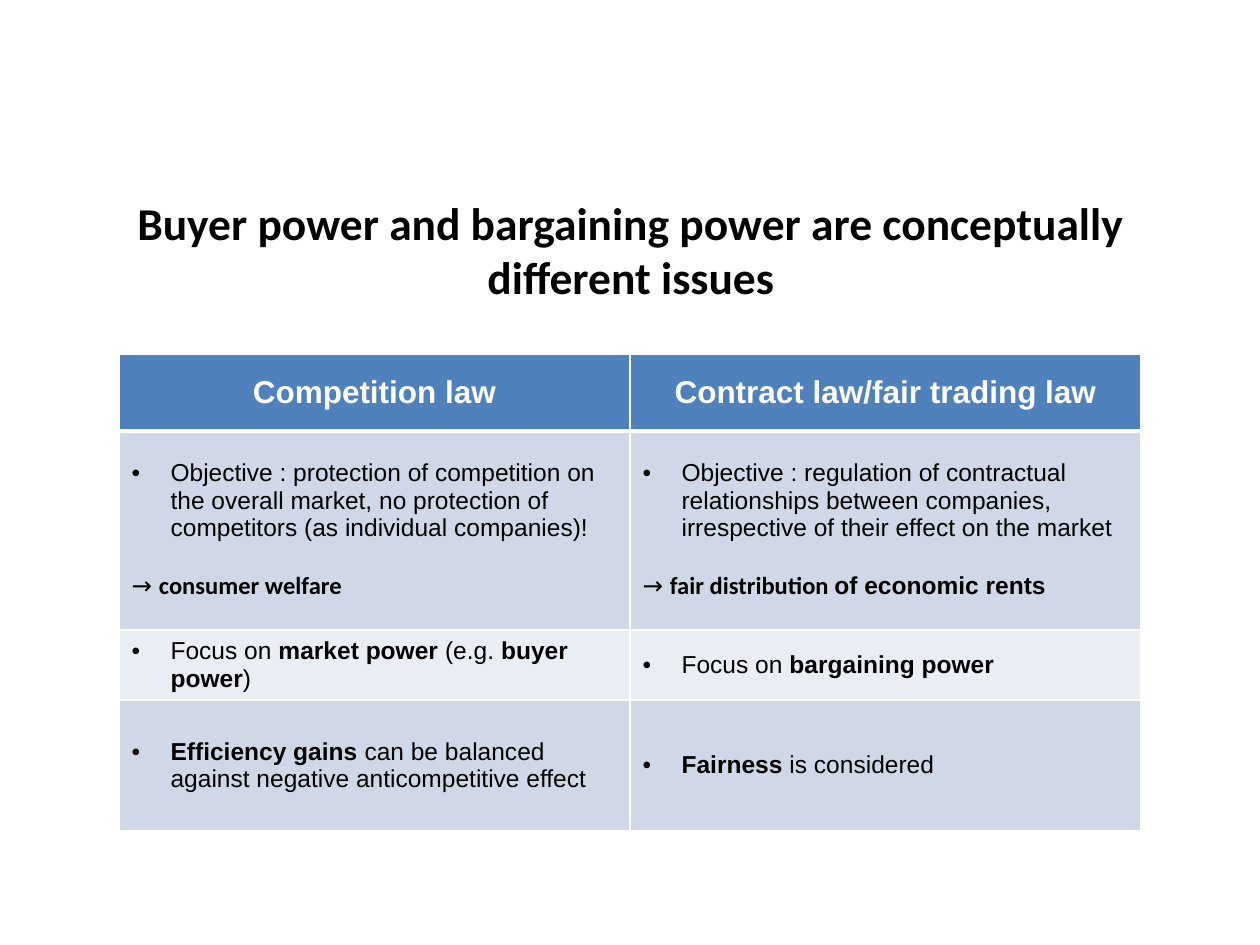
from lxml import etree
from pptx import Presentation
from pptx.dml.color import RGBColor
from pptx.enum.text import MSO_ANCHOR, MSO_AUTO_SIZE, PP_ALIGN
from pptx.oxml.ns import qn
from pptx.util import Emu, Pt

MIDDLE, CENTER, LEFT = MSO_ANCHOR.MIDDLE, PP_ALIGN.CENTER, PP_ALIGN.LEFT

THEME = {
    "head_font": "Calibri", "body_font": "Arial", "arrow_font": "Quicksand",
    "title_size": 26, "header_size": 18, "body_size": 14,
    "text": "000000", "white": "FFFFFF", "header_fill": "4F81BD",
    "bands": ("D0D8E8", "E9EDF4"),
    "thin": 1, "thick": 3, "conclusion_gap": 16,
}

TITLE = "Buyer power and bargaining power are conceptually different issues"
HEADERS = ("Competition law", "Contract law/fair trading law")

# A paragraph is (kind, runs); a run is (text, style).
ROWS = [
    [
        [("bullet", [("Objective : protection of competition on the overall market, "
                      "no protection of competitors (as individual companies)!", "plain")]),
         ("conclusion", [("→ ", "arrow"), ("consumer welfare", "result")])],
        [("bullet", [("Objective : regulation of contractual relationships between "
                      "companies, irrespective of their effect on the market", "plain")]),
         ("conclusion", [("→ ", "arrow"), ("fair distribution ", "result"),
                         ("of economic rents", "bold")])],
    ],
    [
        [("bullet", [("Focus on ", "plain"), ("market power", "bold"), (" (e.g. ", "plain"),
                     ("buyer power", "bold"), (")", "plain")])],
        [("bullet", [("Focus on ", "plain"), ("bargaining power", "bold")])],
    ],
    [
        [("bullet", [("Efficiency gains ", "bold"),
                     ("can be balanced against negative anticompetitive effect", "plain")])],
        [("bullet", [("Fairness ", "bold"), ("is considered", "plain")])],
    ],
]

# Lengths in px
SLIDE = (1260, 945)
TITLE_BOX = (64, 185, 1134, 129)
TABLE_AT = (119, 354)
COL_WIDTH = 511
ROW_HEIGHTS = (77, 199, 70, 131)
INDENT = 39


def px(n):
    return Emu(round(n * 914400 / 126))


def run_format(font, size, color, bold):
    return {"name": THEME[font], "size": Pt(THEME[size]), "bold": bold}, THEME[color]


STYLES = {
    "title": run_format("head_font", "title_size", "text", True),
    "header": run_format("body_font", "header_size", "white", True),
    "plain": run_format("body_font", "body_size", "text", False),
    "bold": run_format("body_font", "body_size", "text", True),
    "arrow": run_format("arrow_font", "body_size", "text", False),
    "result": run_format("head_font", "body_size", "text", True),
}


def add_run(p, text, style):
    r = p.add_run()
    r.text = text
    values, color = STYLES[style]
    for name, value in values.items():
        setattr(r.font, name, value)
    r.font.color.rgb = RGBColor.from_string(color)


def add_bullet(p):
    pPr = p._p.get_or_add_pPr()
    pPr.set("marL", str(px(INDENT)))
    pPr.set("indent", str(-px(INDENT)))
    etree.SubElement(pPr, qn("a:buFont"), typeface="Arial")
    etree.SubElement(pPr, qn("a:buChar"), char="•")


def format_cell(cell, fill, is_header):
    """Set white borders, fill and anchor; a header has a thick lower border."""
    cell.vertical_anchor = MIDDLE
    tcPr = cell._tc.get_or_add_tcPr()
    thin, thick = THEME["thin"], THEME["thick"]
    widths = {"lnL": thin, "lnR": thin, "lnT": thin, "lnB": thick if is_header else thin}
    for side, width in widths.items():
        ln = etree.SubElement(tcPr, qn("a:" + side), w=str(Pt(width)))
        solid = etree.SubElement(ln, qn("a:solidFill"))
        etree.SubElement(solid, qn("a:srgbClr"), val=THEME["white"])
    cell.fill.solid()
    cell.fill.fore_color.rgb = RGBColor.from_string(fill)


def fill_cell(cell, paragraphs):
    tf = cell.text_frame
    for i, (kind, runs) in enumerate(paragraphs):
        p = tf.add_paragraph() if i else tf.paragraphs[0]
        p.alignment = CENTER if kind == "header" else LEFT
        if kind == "conclusion":
            p.space_before = Pt(THEME["conclusion_gap"])
        if kind == "bullet":
            add_bullet(p)
        for text, style in runs:
            add_run(p, text, style)


def add_title(s):
    title = s.shapes.title
    title.left, title.top, title.width, title.height = map(px, TITLE_BOX)
    tf = title.text_frame
    for name, value in {"word_wrap": True, "auto_size": MSO_AUTO_SIZE.NONE,
                        "vertical_anchor": MIDDLE}.items():
        setattr(tf, name, value)
    p = tf.paragraphs[0]
    p.alignment = CENTER
    add_run(p, TITLE, "title")


def add_comparison(s):
    headers = [[("header", [(text, "header")])] for text in HEADERS]
    rows = [headers] + ROWS
    size = (COL_WIDTH * len(HEADERS), sum(ROW_HEIGHTS))
    table = s.shapes.add_table(len(rows), len(HEADERS), *map(px, TABLE_AT + size)).table
    for column in table.columns:
        column.width = px(COL_WIDTH)
    for i, (row, height) in enumerate(zip(rows, ROW_HEIGHTS)):
        table.rows[i].height = px(height)
        fill = THEME["bands"][(i - 1) % 2] if i else THEME["header_fill"]
        for j, paragraphs in enumerate(row):
            cell = table.cell(i, j)
            format_cell(cell, fill, i == 0)
            fill_cell(cell, paragraphs)


def main():
    prs = Presentation()
    prs.slide_width, prs.slide_height = map(px, SLIDE)
    s = prs.slides.add_slide(prs.slide_layouts.get_by_name("Title Only"))
    add_title(s)
    add_comparison(s)
    prs.save("out.pptx")


if __name__ == "__main__":
    main()
